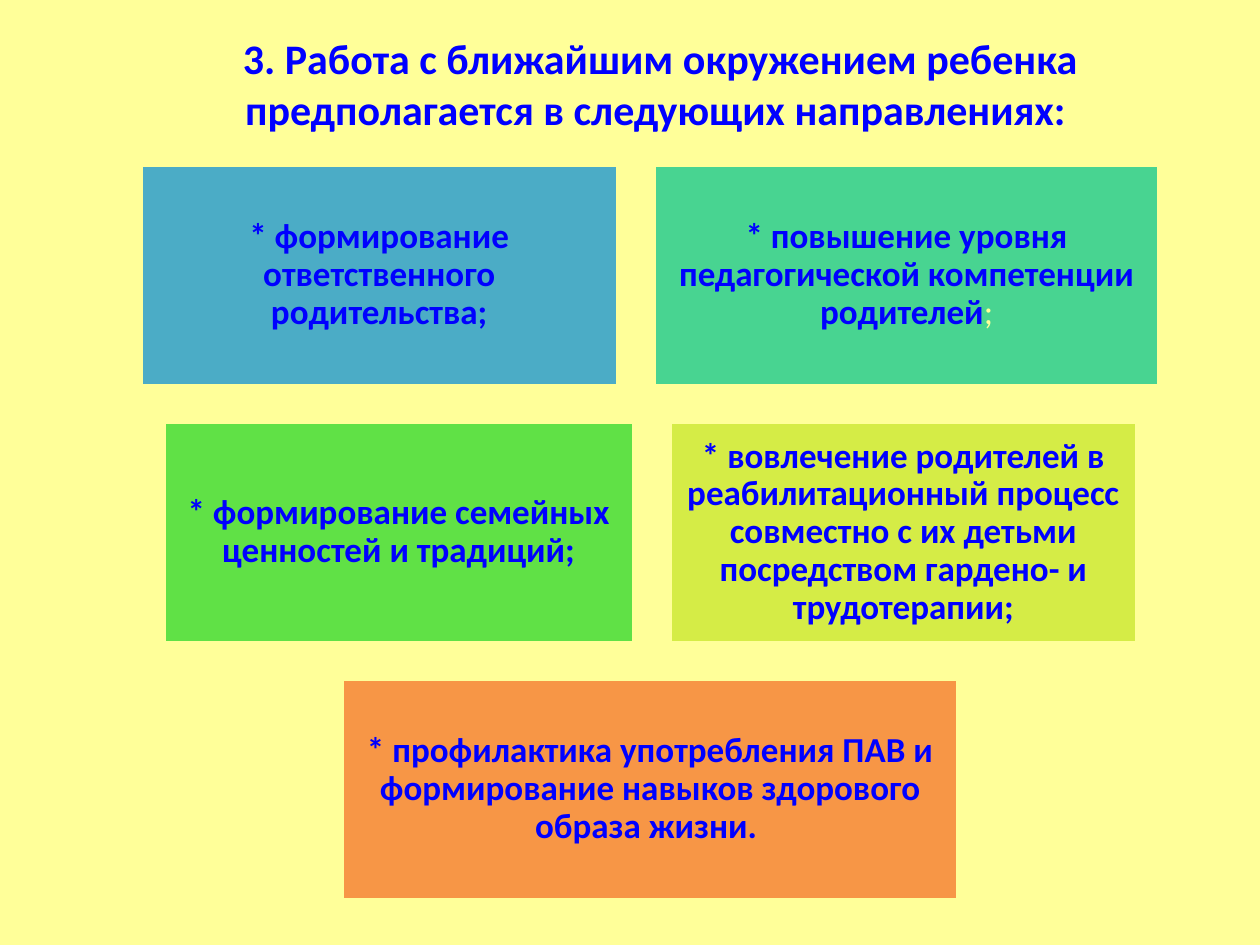
from pptx import Presentation
from pptx.dml.color import RGBColor
from pptx.enum.shapes import MSO_SHAPE
from pptx.enum.text import MSO_ANCHOR, MSO_AUTO_SIZE, PP_ALIGN
from pptx.util import Inches, Pt

CREAM = RGBColor(0xFF, 0xFF, 0x99)
BLUE = RGBColor(0x00, 0x00, 0xFF)
TEAL = RGBColor(0x4B, 0xAC, 0xC6)
MINT = RGBColor(0x48, 0xD4, 0x91)
GREEN = RGBColor(0x60, 0xE1, 0x46)
LIME = RGBColor(0xD5, 0xEC, 0x46)
ORANGE = RGBColor(0xF7, 0x96, 0x46)

TITLE = ["3. Работа с ближайшим окружением ребенка",
         "предполагается в следующих направлениях: "]
ROWS = [
    [(3.78, TEAL, ["* формирование ответственного родительства;"]),
     (4.01, MINT, ["* повышение уровня педагогической компетенции родителей", ";"])],
    [(3.73, GREEN, ["* формирование семейных ценностей и традиций;"]),
     (3.7, LIME, ["* вовлечение родителей в реабилитационный процесс совместно "
                  "с их детьми посредством гардено- и трудотерапии;"])],
    [(4.88, ORANGE, ["* профилактика употребления ПАВ и формирование навыков "
                     "здорового образа жизни. "])],
]
CENTER, TOP, HEIGHT, GAP = 5.16, 1.31, 1.75, 0.29


def add_run(p, text, size, color=BLUE, bold=True):
    r = p.add_run()
    r.text = text
    r.font.name = "Calibri"
    r.font.size = Pt(size)
    r.font.bold = bold
    r.font.color.rgb = color


def add_title(s):
    sp = s.shapes.title
    sp.left, sp.top, sp.width, sp.height = map(Inches, (0.83, 0.21, 8.82, 0.91))
    tf = sp.text_frame
    tf.auto_size = MSO_AUTO_SIZE.NONE
    tf.vertical_anchor = MSO_ANCHOR.TOP
    for i, line in enumerate(TITLE):
        p = tf.add_paragraph() if i else tf.paragraphs[0]
        p.alignment = PP_ALIGN.CENTER
        add_run(p, line, 24)


def add_box(s, left, top, width, fill, parts):
    sp = s.shapes.add_shape(MSO_SHAPE.RECTANGLE, Inches(left), Inches(top),
                            Inches(width), Inches(HEIGHT))
    sp.shadow.inherit = False
    sp.fill.solid()
    sp.fill.fore_color.rgb = fill
    sp.line.color.rgb = CREAM
    sp.line.width = Pt(2)
    tf = sp.text_frame
    tf.word_wrap = True
    tf.vertical_anchor = MSO_ANCHOR.MIDDLE
    tf.margin_left = tf.margin_right = tf.margin_top = tf.margin_bottom = Inches(0.08)
    p = tf.paragraphs[0]
    p.alignment = PP_ALIGN.CENTER
    p.line_spacing = 0.9
    add_run(p, parts[0], 20)
    for mark in parts[1:]:
        add_run(p, mark, 20, CREAM, False)


def main():
    prs = Presentation()
    prs.slide_width, prs.slide_height = Inches(10), Inches(7.5)
    s = prs.slides.add_slide(prs.slide_layouts[5])
    s.background.fill.solid()
    s.background.fill.fore_color.rgb = CREAM
    add_title(s)
    for i, row in enumerate(ROWS):
        total = sum(width for width, _, _ in row) + GAP * (len(row) - 1)
        left = CENTER - total / 2
        for width, fill, parts in row:
            add_box(s, left, TOP + i * (HEIGHT + GAP), width, fill, parts)
            left += width + GAP
    prs.save("out.pptx")


if __name__ == "__main__":
    main()
